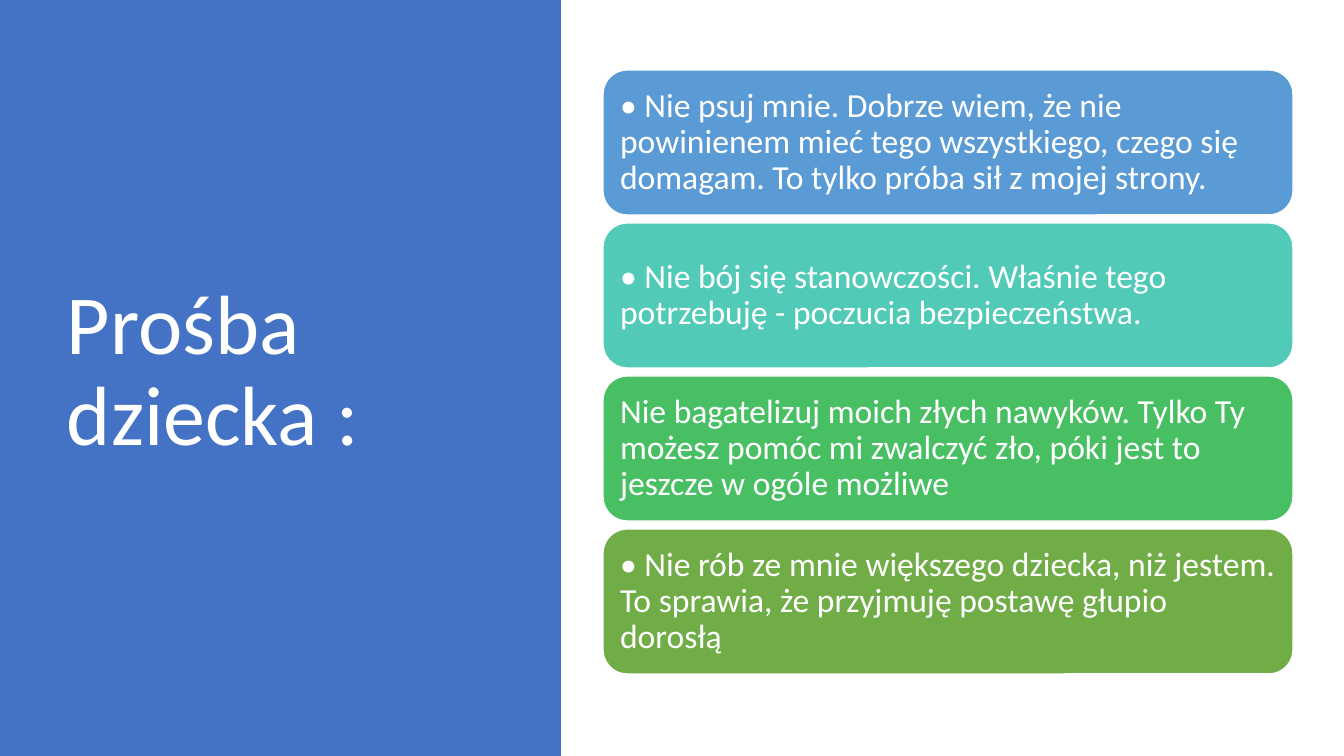
from dataclasses import dataclass

from pptx import Presentation
from pptx.dml.color import RGBColor
from pptx.enum.shapes import MSO_SHAPE
from pptx.enum.text import MSO_ANCHOR, PP_ALIGN
from pptx.shapes.autoshape import Shape
from pptx.slide import Slide
from pptx.util import Emu, Pt

RECT = MSO_SHAPE.RECTANGLE
ROUND = MSO_SHAPE.ROUNDED_RECTANGLE
MIDDLE = MSO_ANCHOR.MIDDLE
LEFT = PP_ALIGN.LEFT

SCALE = 12192000 / 1344
WIDTH, HEIGHT = 1344, 756
INSET = 10
CARD_X, CARD_Y, CARD_W, CARD_H = 603, 70, 690, 145
PITCH = 153


@dataclass(frozen=True)
class Theme:
    font: str = "Calibri"
    white: str = "FFFFFF"
    panel: str = "4472C4"
    title: int = 60
    body: int = 24
    edge: int = 1


@dataclass(frozen=True)
class Card:
    text: str
    fill: str


THEME = Theme()
CARDS = (
    Card("• Nie psuj mnie. Dobrze wiem, że nie powinienem mieć tego wszystkiego, "
         "czego się domagam. To tylko próba sił z mojej strony.", "5B9BD5"),
    Card("• Nie bój się stanowczości. Właśnie tego potrzebuję - "
         "poczucia bezpieczeństwa.", "52CAB8"),
    Card("Nie bagatelizuj moich złych nawyków. Tylko Ty możesz pomóc mi "
         "zwalczyć zło, póki jest to jeszcze w ogóle możliwe", "49BF64"),
    Card("• Nie rób ze mnie większego dziecka, niż jestem. To sprawia, "
         "że przyjmuję postawę głupio dorosłą", "70AD47"),
)


def px(n: int) -> Emu:
    return Emu(round(n * SCALE))


def color(code: str) -> RGBColor:
    return RGBColor.from_string(code)


def add_box(slide: Slide, kind: MSO_SHAPE, x: int, y: int,
            w: int, h: int, fill: str) -> Shape:
    """Add a filled shape with neither line nor shadow."""
    box = slide.shapes.add_shape(kind, px(x), px(y), px(w), px(h))
    box.shadow.inherit = False
    box.fill.solid()
    box.fill.fore_color.rgb = color(fill)
    box.line.fill.background()
    return box


def set_text(shape: Shape, text: str, size: int) -> None:
    frame = shape.text_frame
    frame.text = text
    frame.word_wrap = True
    frame.vertical_anchor = MIDDLE
    frame.margin_left = frame.margin_right = px(INSET)
    frame.margin_top = frame.margin_bottom = px(INSET)
    para = frame.paragraphs[0]
    para.alignment = LEFT
    para.line_spacing = 0.9
    font = para.runs[0].font
    font.name = THEME.font
    font.size = Pt(size)
    font.color.rgb = color(THEME.white)


def add_card(slide: Slide, card: Card, y: int) -> None:
    box = add_box(slide, ROUND, CARD_X, y, CARD_W, CARD_H, card.fill)
    box.line.color.rgb = color(THEME.white)
    box.line.width = Pt(THEME.edge)
    set_text(box, card.text, THEME.body)


def main() -> None:
    deck = Presentation()
    deck.slide_width, deck.slide_height = px(WIDTH), px(HEIGHT)
    slide = deck.slides.add_slide(deck.slide_layouts[6])

    add_box(slide, RECT, 0, 0, 561, HEIGHT, THEME.panel)
    title = slide.shapes.add_textbox(px(57), px(69), px(419), px(607))
    set_text(title, "Prośba dziecka :", THEME.title)

    for i, card in enumerate(CARDS):
        add_card(slide, card, CARD_Y + i * PITCH)

    deck.save("out.pptx")


if __name__ == "__main__":
    main()
